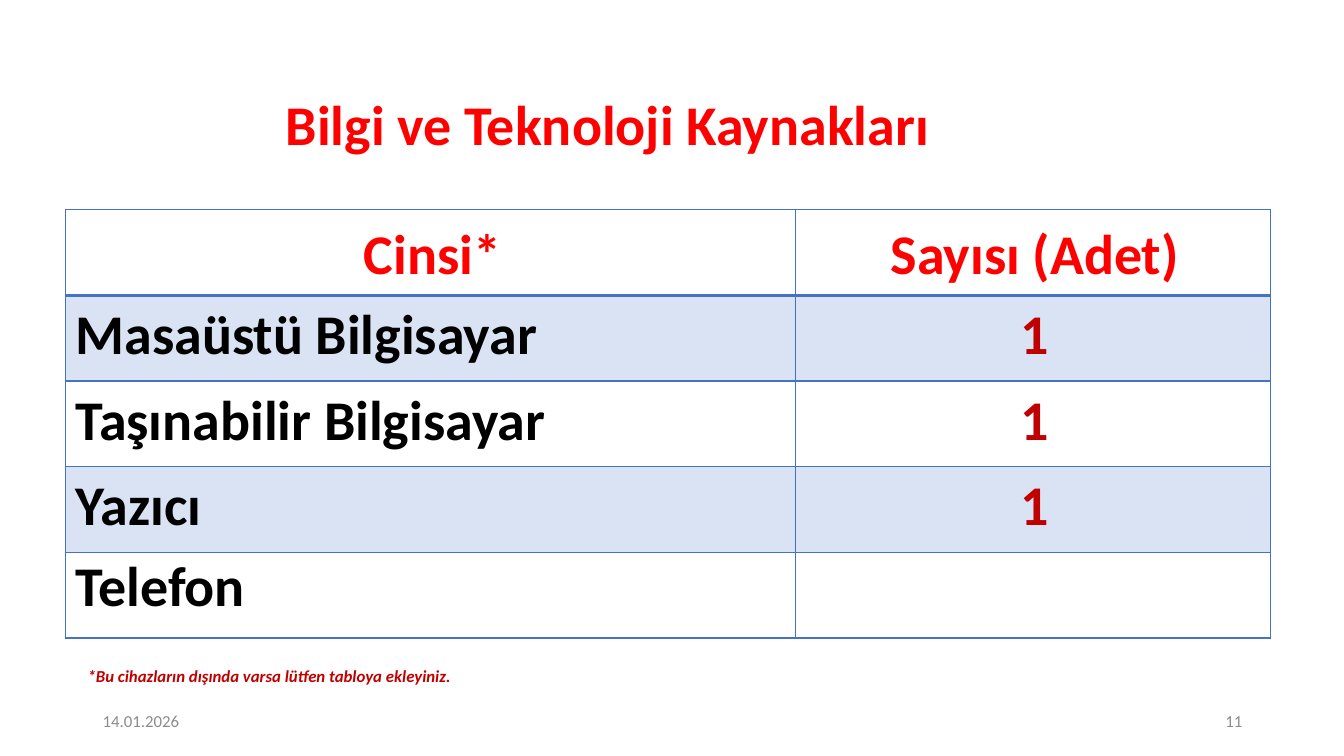
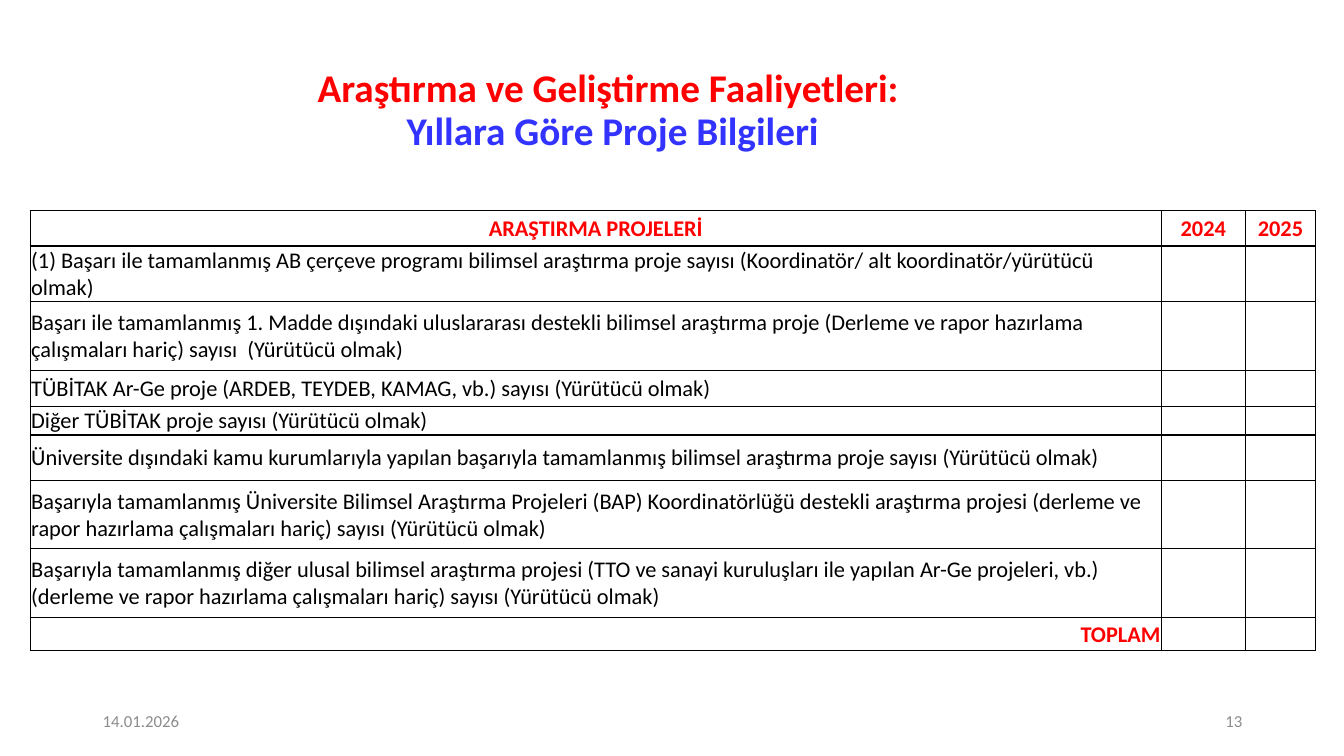
import dataclasses

import lxml.etree
import pptx
import pptx.dml.color
import pptx.enum.text
import pptx.oxml.ns
import pptx.util

Inches, Pt = pptx.util.Inches, pptx.util.Pt
Align, Anchor = pptx.enum.text.PP_ALIGN, pptx.enum.text.MSO_ANCHOR
qn = pptx.oxml.ns.qn


@dataclasses.dataclass(frozen=True)
class Theme:
    face: str = "Calibri"
    red: str = "FF0000"
    dark: str = "C00000"
    black: str = "000000"
    white: str = "FFFFFF"
    blue: str = "3333FF"
    line: str = "4472C4"
    band: str = "DAE3F3"
    gray: str = "8C8C8C"
    large: int = 40
    head: int = 28
    body: int = 16
    small: int = 12


theme = Theme()


def write(par, text, size, color, align=Align.LEFT, bold=False, slant=False):
    par.alignment = align
    font = par.add_run()
    font.text = text
    font = font.font
    look = {"name": theme.face, "size": Pt(size), "bold": bold, "italic": slant}
    for key, value in look.items():
        setattr(font, key, value)
    font.color.rgb = pptx.dml.color.RGBColor.from_string(color)


def frame(cell, fill, edge, size, pads, widths):
    """Set a cell's borders, fill, margins and the text size it keeps when empty."""
    props = cell._tc.get_or_add_tcPr()
    for side, width in zip("LRTB", widths):
        line = lxml.etree.SubElement(props, qn(f"a:ln{side}"), w=str(Pt(width)))
        solid = lxml.etree.SubElement(line, qn("a:solidFill"))
        lxml.etree.SubElement(solid, qn("a:srgbClr"), val=edge)
    cell.fill.solid()
    cell.fill.fore_color.rgb = pptx.dml.color.RGBColor.from_string(fill)
    for side, pad in zip(("left", "top", "right", "bottom"), pads):
        setattr(cell, f"margin_{side}", Inches(pad))
    if not cell.text_frame.text:
        par = cell.text_frame.paragraphs[0]._p
        lxml.etree.SubElement(par, qn("a:endParaRPr"), sz=str(size * 100))


tools = {
    "page": "11",
    "title": [("Bilgi ve Teknoloji Kaynakları", theme.red)],
    "title_size": theme.large,
    "title_box": (0.29, 0.85, 11.47, 0.83),
    "spot": (0.65, 2.08),
    "cols": (7.24, 4.71),
    "heights": (0.85,) * 5,
    "cells": [
        ("Cinsi*", "Sayısı (Adet)"),
        ("Masaüstü Bilgisayar", "1"),
        ("Taşınabilir Bilgisayar", "1"),
        ("Yazıcı", "1"),
        ("Telefon", ""),
    ],
    "size": theme.large,
    "edge": theme.line,
    "band": theme.band,
    "pads": (0.1, 0.01, 0.06, 0),
    "bold": True,
    "rule": 2,
    "anchor": Anchor.TOP,
    "spacing": 1.07,
    "after": 8,
    "note": "*Bu cihazların dışında varsa lütfen tabloya ekleyiniz.",
}
works = {
    "page": "13",
    "title": [
        ("Araştırma ve Geliştirme Faaliyetleri: ", theme.red),
        ("Yıllara Göre Proje Bilgileri", theme.blue),
    ],
    "title_size": theme.head,
    "title_box": (0.4, 0.69, 11.35, 0.83),
    "spot": (0.3, 2.09),
    "cols": (11.22, 0.83, 0.7),
    "heights": (0.35, 0.55, 0.68, 0.36, 0.28, 0.45, 0.68, 0.68, 0.33),
    "cells": [
        ("ARAŞTIRMA PROJELERİ", "2024", "2025"),
        ("(1) Başarı ile tamamlanmış AB çerçeve programı bilimsel araştırma proje "
         "sayısı (Koordinatör/ alt koordinatör/yürütücü olmak)", "", ""),
        ("Başarı ile tamamlanmış 1. Madde dışındaki uluslararası destekli bilimsel "
         "araştırma proje (Derleme ve rapor hazırlama çalışmaları hariç) sayısı  "
         "(Yürütücü olmak)", "", ""),
        ("TÜBİTAK Ar-Ge proje (ARDEB, TEYDEB, KAMAG, vb.) sayısı (Yürütücü olmak)",
         "", ""),
        ("Diğer TÜBİTAK proje sayısı (Yürütücü olmak)", "", ""),
        ("Üniversite dışındaki kamu kurumlarıyla yapılan başarıyla tamamlanmış "
         "bilimsel araştırma proje sayısı (Yürütücü olmak)", "", ""),
        ("Başarıyla tamamlanmış Üniversite Bilimsel Araştırma Projeleri (BAP) "
         "Koordinatörlüğü destekli araştırma projesi (derleme ve rapor hazırlama "
         "çalışmaları hariç) sayısı (Yürütücü olmak)", "", ""),
        ("Başarıyla tamamlanmış diğer ulusal bilimsel araştırma projesi (TTO ve "
         "sanayi kuruluşları ile yapılan Ar-Ge projeleri, vb.) (derleme ve rapor "
         "hazırlama çalışmaları hariç) sayısı (Yürütücü olmak)", "", ""),
        ("TOPLAM", "", ""),
    ],
    "size": theme.body,
    "edge": theme.black,
    "band": theme.white,
    "pads": (0.01, 0.01, 0.01, 0),
    "bold": False,
    "rule": 1,
    "anchor": Anchor.MIDDLE,
    "spacing": 1.0,
    "after": 0,
    "note": None,
}

deck = pptx.Presentation()
deck.slide_width, deck.slide_height = Inches(13.33), Inches(7.5)

for plan in (tools, works):
    slide = deck.slides.add_slide(deck.slide_layouts[5])
    title = slide.shapes.title
    for key, value in zip(("left", "top", "width", "height"), plan["title_box"]):
        setattr(title, key, Inches(value))
    title.text_frame.auto_size = pptx.enum.text.MSO_AUTO_SIZE.NONE
    title.text_frame.vertical_anchor = Anchor.MIDDLE
    par = title.text_frame.paragraphs[0]
    par.line_spacing = 0.9
    for place, (text, color) in enumerate(plan["title"]):
        if place:
            par.add_line_break()
        write(par, text, plan["title_size"], color, Align.CENTER, True)

    cells, cols, heights = plan["cells"], plan["cols"], plan["heights"]
    left, top = plan["spot"]
    table = slide.shapes.add_table(
        len(cells), len(cols), Inches(left), Inches(top),
        Inches(sum(cols)), Inches(sum(heights))).table
    table.first_row = table.horz_banding = False
    for col, width in zip(table.columns, cols):
        col.width = Inches(width)
    for row, height in zip(table.rows, heights):
        row.height = Inches(height)

    for r, texts in enumerate(cells):
        for c, text in enumerate(texts):
            cell = table.cell(r, c)
            header, total = r == 0, text == "TOPLAM"
            cell.vertical_anchor = Anchor.MIDDLE if header else plan["anchor"]
            if text:
                par = cell.text_frame.paragraphs[0]
                if text != "Telefon":
                    par.line_spacing = plan["spacing"]
                    par.space_after = Pt(plan["after"])
                align = Align.CENTER if header or c else Align.LEFT
                color = theme.red if header or total else theme.dark if c else theme.black
                write(par, text, plan["size"], color,
                      Align.RIGHT if total else align, header or total or plan["bold"])
            rule = plan["rule"]
            widths = (1, 1, rule if r == 1 else 1,
                      rule if r in (0, len(cells) - 1) else 1)
            frame(cell, plan["band"] if r % 2 else theme.white,
                  plan["edge"], plan["size"] if text else theme.body,
                  plan["pads"], widths)

    labels = [
        ("14.01.2026", (0.92, 6.95, 3, 0.4), theme.gray, Align.LEFT, False),
        (plan["page"], (9.42, 6.95, 3, 0.4), theme.gray, Align.RIGHT, False),
    ]
    if plan["note"]:
        labels.append((plan["note"], (0.77, 6.56, 5, 0.3), theme.dark, Align.LEFT, True))
    for text, box, color, align, strong in labels:
        body = slide.shapes.add_textbox(*map(Inches, box)).text_frame
        body.word_wrap = True
        body.vertical_anchor = Anchor.TOP if strong else Anchor.MIDDLE
        write(body.paragraphs[0], text, theme.small, color, align, strong, strong)

deck.save("out.pptx")
